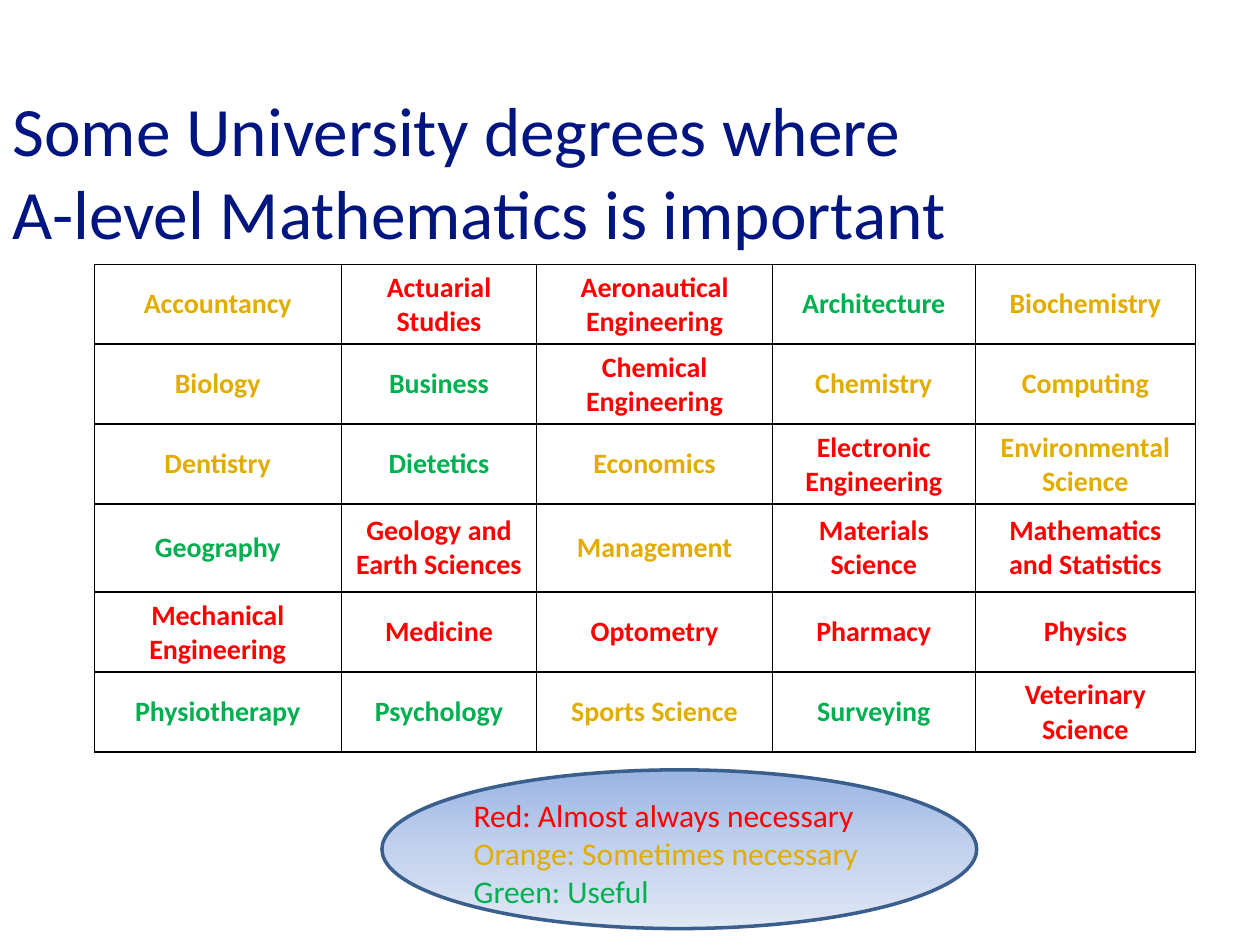
from copy import deepcopy

from lxml import etree
from pptx import Presentation
from pptx.dml.color import RGBColor
from pptx.enum.shapes import MSO_SHAPE
from pptx.enum.text import MSO_ANCHOR, MSO_AUTO_SIZE, PP_ALIGN
from pptx.oxml.ns import qn
from pptx.util import Cm, Pt

CENTER, LEFT = PP_ALIGN.CENTER, PP_ALIGN.LEFT
MIDDLE = MSO_ANCHOR.MIDDLE
OVAL = MSO_SHAPE.OVAL
FIT_SHAPE = MSO_AUTO_SIZE.SHAPE_TO_FIT_TEXT
TITLE_ONLY = 5

FONT = "Calibri"
COLORS = {"R": "FF0000", "O": "E2AC00", "G": "00B050"}
COL_WIDTHS = (4.98, 3.94, 4.75, 4.09, 4.44)
ROW_HEIGHTS = (1.53, 1.53, 1.53, 1.78, 1.53, 1.53)
DEGREES = (
    (("Accountancy", "O"), ("Actuarial Studies", "R"), ("Aeronautical Engineering", "R"),
     ("Architecture", "G"), ("Biochemistry", "O")),
    (("Biology", "O"), ("Business", "G"), ("Chemical Engineering", "R"),
     ("Chemistry", "O"), ("Computing", "O")),
    (("Dentistry", "O"), ("Dietetics", "G"), ("Economics", "O"),
     ("Electronic Engineering", "R"), ("Environmental Science", "O")),
    (("Geography", "G"), ("Geology and Earth Sciences", "R"), ("Management", "O"),
     ("Materials Science", "R"), ("Mathematics and Statistics", "R")),
    (("Mechanical Engineering", "R"), ("Medicine", "R"), ("Optometry", "R"),
     ("Pharmacy", "R"), ("Physics", "R")),
    (("Physiotherapy", "G"), ("Psychology", "G"), ("Sports Science", "O"),
     ("Surveying", "G"), ("Veterinary Science", "R")),
)
LEGEND = (
    ("Red: Almost always necessary", "R"),
    ("Orange: Sometimes necessary", "O"),
    ("Green: Useful", "G"),
)


def rgb(value):
    """Turn a hex string into a colour."""
    return RGBColor.from_string(value)


def style(p, size, color, bold=False, align=LEFT):
    """Format a whole paragraph."""
    p.alignment = align
    p.font.name = FONT
    p.font.size = Pt(size)
    p.font.bold = bold
    p.font.color.rgb = rgb(color)


def add_borders(cell, color="000000", width=Pt(1)):
    """Draw a solid line on all four sides of a cell."""
    tc_pr = cell._tc.get_or_add_tcPr()
    for side in "LRTB":
        ln = etree.SubElement(tc_pr, qn(f"a:ln{side}"), w=str(width))
        fill = etree.SubElement(ln, qn("a:solidFill"))
        etree.SubElement(fill, qn("a:srgbClr"), val=color)


def add_title(s, x, y, w, h):
    """Fill and place the title placeholder."""
    title = s.shapes.title
    title.left, title.top, title.width, title.height = Cm(x), Cm(y), Cm(w), Cm(h)
    tf = title.text_frame
    tf.word_wrap = True
    tf.auto_size = MSO_AUTO_SIZE.NONE
    tf.vertical_anchor = MIDDLE
    p = tf.paragraphs[0]
    p.text = "Some University degrees where\vA-level Mathematics is important"
    style(p, 39.6, "00157F")


def add_degrees(s, x, y):
    """Build the table of degrees, coloured by need for mathematics."""
    table = s.shapes.add_table(
        len(ROW_HEIGHTS), len(COL_WIDTHS), Cm(x), Cm(y),
        Cm(sum(COL_WIDTHS)), Cm(sum(ROW_HEIGHTS))).table
    table.first_row = table.horz_banding = False
    for col, width in zip(table.columns, COL_WIDTHS):
        col.width = Cm(width)
    for row, height, degrees in zip(table.rows, ROW_HEIGHTS, DEGREES):
        row.height = Cm(height)
        for cell, (name, need) in zip(row.cells, degrees):
            add_borders(cell)
            cell.fill.background()
            cell.vertical_anchor = MIDDLE
            p = cell.text_frame.paragraphs[0]
            p.text = name
            style(p, 16, COLORS[need], bold=True, align=CENTER)


def add_legend(s, x, y, w, h):
    """Draw the oval and the key to the colours on it."""
    oval = s.shapes.add_shape(OVAL, Cm(x), Cm(y), Cm(w), Cm(h))
    oval.shadow.inherit = False
    oval.line.color.rgb = rgb("3A5F8C")
    oval.line.width = Pt(2)
    oval.fill.gradient()
    oval.fill.gradient_angle = 270
    first = oval.fill.gradient_stops[0]._gs
    first.addnext(deepcopy(first))
    stops = ((0, "9AB5E4"), (0.5, "C2D1ED"), (1, "E1E8F5"))
    for stop, (position, color) in zip(oval.fill.gradient_stops, stops):
        stop.position = position
        stop.color.rgb = rgb(color)

    box = s.shapes.add_textbox(Cm(x + 1.6), Cm(y + 0.41), Cm(9.32), Cm(2.57))
    tf = box.text_frame
    tf.word_wrap = False
    tf.auto_size = FIT_SHAPE
    for i, (text, need) in enumerate(LEGEND):
        p = tf.add_paragraph() if i else tf.paragraphs[0]
        p.text = text
        style(p, 18, COLORS[need])


def main():
    """Build and save the slide."""
    prs = Presentation()
    prs.slide_width, prs.slide_height = Cm(25.4), Cm(19.05)
    s = prs.slides.add_slide(prs.slide_layouts[TITLE_ONLY])
    add_legend(s, 7.7, 15.52, 11.99, 3.2)
    add_title(s, 0, 1.85, 22.86, 3.18)
    add_degrees(s, 1.9, 5.33)
    prs.save("out.pptx")


if __name__ == "__main__":
    main()
